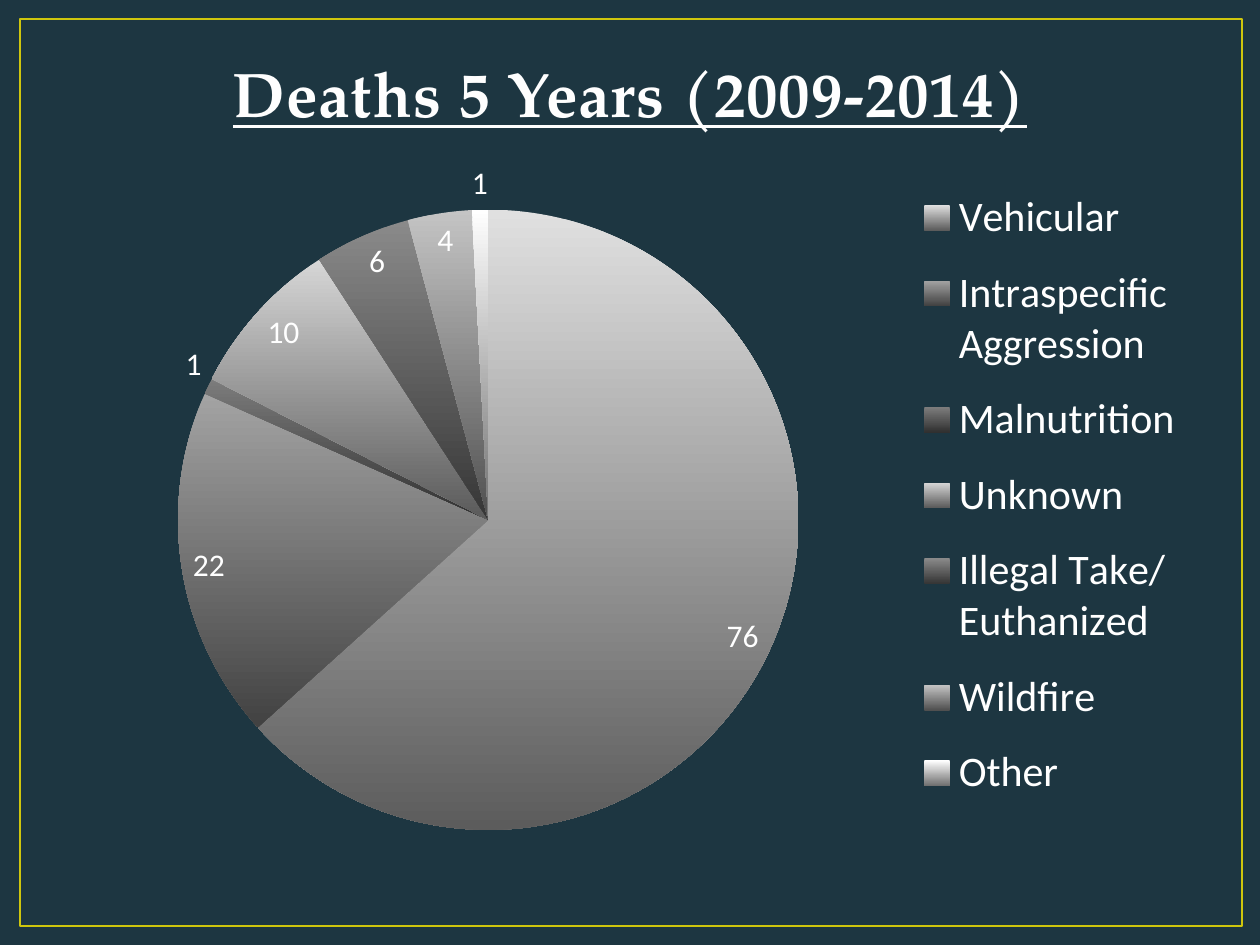
import pptx
import pptx.chart.data
import pptx.dml.color
import pptx.enum.chart
import pptx.enum.shapes
import pptx.enum.text
import pptx.oxml
import pptx.oxml.ns
import pptx.util

EMU_PER_PX = 914400 // 126
WHITE = "FFFFFF"

# category, value, top colour, bottom colour
DEATHS = [
    ("Vehicular", 76, "E0E0E0", "5C5C5C"),
    ("Intraspecific Aggression", 22, "A3A3A3", "424242"),
    ("Malnutrition", 1, "7C7C7C", "303030"),
    ("Unknown", 10, "D6D6D6", "5A5A5A"),
    ("Illegal Take/ Euthanized", 6, "8A8A8A", "363636"),
    ("Wildfire", 4, "C4C4C4", "505050"),
    ("Other", 1, "FFFFFF", "707070"),
]


def px(length):
    return pptx.util.Emu(length * EMU_PER_PX)


def rgb(colour):
    return pptx.dml.color.RGBColor.from_string(colour)


def style_font(font, size, colour, name):
    font.size = pptx.util.Pt(size)
    font.color.rgb = rgb(colour)
    font.name = name


def chart_layout(x, y, width, height, inner=False):
    """Return a manual layout element; lengths are fractions of the chart."""
    target = '<c:layoutTarget val="inner"/>' if inner else ""
    return pptx.oxml.parse_xml(
        f'<c:layout {pptx.oxml.ns.nsdecls("c")}><c:manualLayout>{target}'
        '<c:xMode val="edge"/><c:yMode val="edge"/>'
        f'<c:x val="{x}"/><c:y val="{y}"/><c:w val="{width}"/><c:h val="{height}"/>'
        '</c:manualLayout></c:layout>')


class SlideBuilder:
    """Holds the style and the current slide."""

    title_font = "TeX Gyre Pagella"
    body_font = "Calibri"

    def __init__(self, presentation, background):
        self.slide = presentation.slides.add_slide(presentation.slide_layouts[6])
        fill = self.slide.background.fill
        fill.solid()
        fill.fore_color.rgb = rgb(background)

    def frame(self, left, top, width, height, colour):
        shape = self.slide.shapes.add_shape(
            pptx.enum.shapes.MSO_SHAPE.RECTANGLE,
            px(left), px(top), px(width), px(height))
        shape.shadow.inherit = False
        shape.fill.background()
        shape.line.color.rgb = rgb(colour)
        shape.line.width = pptx.util.Pt(1.5)

    def title(self, left, top, width, height, text):
        box = self.slide.shapes.add_textbox(px(left), px(top), px(width), px(height))
        frame = box.text_frame
        frame.word_wrap = True
        frame.vertical_anchor = pptx.enum.text.MSO_ANCHOR.BOTTOM
        paragraph = frame.paragraphs[0]
        paragraph.alignment = pptx.enum.text.PP_ALIGN.CENTER
        run = paragraph.add_run()
        run.text = text
        style_font(run.font, 36, "FEFEFE", self.title_font)
        run.font.bold = True
        run.font.underline = True
        properties = run._r.get_or_add_rPr()
        properties.set("spc", "50")
        properties.insert(0, pptx.oxml.parse_xml(
            f'<a:ln {pptx.oxml.ns.nsdecls("a")} w="13335"><a:solidFill>'
            '<a:srgbClr val="384F55"/></a:solidFill></a:ln>'))

    def pie(self, left, top, width, height, rows):
        data = pptx.chart.data.CategoryChartData()
        data.categories = [row[0] for row in rows]
        data.add_series("Series 1", [row[1] for row in rows])
        chart = self.slide.shapes.add_chart(
            pptx.enum.chart.XL_CHART_TYPE.PIE,
            px(left), px(top), px(width), px(height), data).chart
        chart.has_title = False
        style_font(chart.font, 10, WHITE, self.body_font)

        plot = chart.plots[0]
        plot.vary_by_categories = True
        for index, (_, _, top_colour, bottom_colour) in enumerate(rows):
            point_format = plot.series[0].points[index].format
            point_format.line.fill.background()
            fill = point_format.fill
            fill.gradient()
            fill.gradient_angle = 270
            for stop, colour in zip(fill.gradient_stops, (top_colour, bottom_colour)):
                stop.color.rgb = rgb(colour)

        plot.has_data_labels = True
        labels = plot.data_labels
        labels.show_value = True
        labels.show_percentage = False
        labels.position = pptx.enum.chart.XL_LABEL_POSITION.BEST_FIT
        style_font(labels.font, 18, WHITE, self.body_font)

        chart.has_legend = True
        legend = chart.legend
        legend.position = pptx.enum.chart.XL_LEGEND_POSITION.RIGHT
        legend.include_in_layout = False
        style_font(legend.font, 24, WHITE, self.body_font)
        self.place(legend._element, chart_layout(0.75, 0.03, 0.24, 0.94))
        self.place(chart._chartSpace.chart.plotArea,
                   chart_layout(0.1, 0.09, 0.55, 0.89, inner=True))

    @staticmethod
    def place(element, layout):
        """Put the layout into a legend or plot area in schema order."""
        for old in element.findall(pptx.oxml.ns.qn("c:layout")):
            element.remove(old)
        position = element.find(pptx.oxml.ns.qn("c:legendPos"))
        if position is None:
            element.insert(0, layout)
        else:
            position.addnext(layout)


def main():
    presentation = pptx.Presentation()
    presentation.slide_width = px(1260)
    presentation.slide_height = px(945)
    builder = SlideBuilder(presentation, "1D3641")
    builder.frame(20, 19, 1222, 907, "CFC60D")
    builder.title(63, 38, 1134, 98, "Deaths 5 Years (2009-2014)")
    builder.pie(63, 147, 1134, 697, DEATHS)
    presentation.save("out.pptx")


if __name__ == "__main__":
    main()
